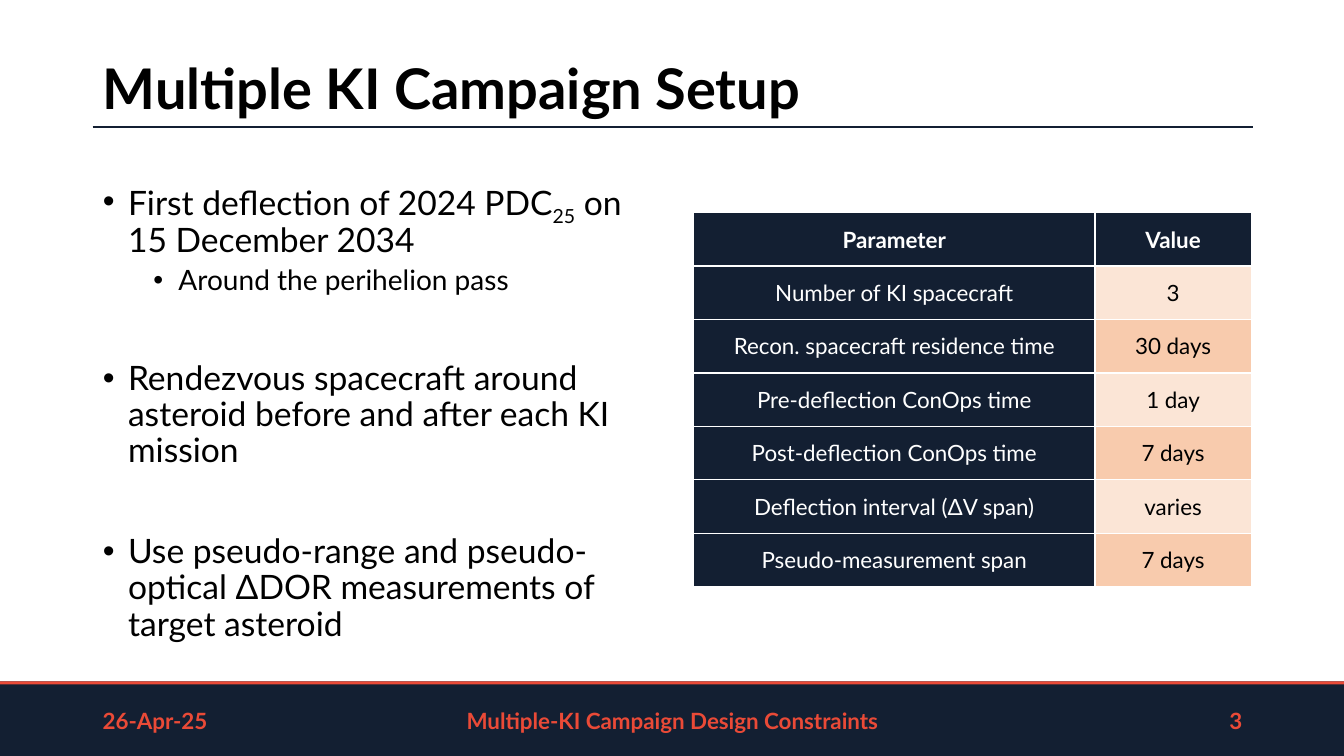
from lxml import etree
from pptx import Presentation
from pptx import util as u
from pptx.dml.color import RGBColor
from pptx.enum import shapes, text
from pptx.oxml.ns import qn

COLORS = {
    "navy": "131F32",
    "red": "EA4A37",
    "black": "000000",
    "white": "FFFFFF",
    "light": "FBE5D6",
    "peach": "F8CBAD",
}
FONT = "Lato"
ALIGN = text.PP_ALIGN
MIDDLE = text.MSO_ANCHOR.MIDDLE

PARAMETERS = [
    ("Parameter", "Value"),
    ("Number of KI spacecraft", "3"),
    ("Recon. spacecraft residence time", "30 days"),
    ("Pre-deflection ConOps time", "1 day"),
    ("Post-deflection ConOps time", "7 days"),
    ("Deflection interval (ΔV span)", "varies"),
    ("Pseudo-measurement span", "7 days"),
]

POINTS = [
    (0, 0, [("First deflection of 2024 PDC", 0), ("25", -25000), (" on 15 December 2034", 0)]),
    (1, 5, [("Around the perihelion pass", 0)]),
    (0, 46, [("Rendezvous spacecraft around asteroid before and after each KI mission", 0)]),
    (0, 46, [("Use pseudo-range and pseudo-optical ΔDOR measurements of target asteroid", 0)]),
]


def rgb(name):
    return RGBColor.from_string(COLORS[name])


class CampaignSlide:
    def __init__(self, deck):
        self.slide = deck.slides.add_slide(deck.slide_layouts[1])

    def style(self, paragraph, size, color, bold=False, align=ALIGN.LEFT):
        paragraph.alignment = align
        paragraph.font.name = FONT
        paragraph.font.size = u.Pt(size)
        paragraph.font.bold = bold
        paragraph.font.color.rgb = rgb(color)

    def place(self, item, left, top, width, height):
        item.left, item.top = u.Inches(left), u.Inches(top)
        item.width, item.height = u.Inches(width), u.Inches(height)

    def bar(self, top, height, color):
        band = self.slide.shapes.add_shape(
            shapes.MSO_SHAPE.RECTANGLE,
            u.Inches(-0.01), u.Inches(top), u.Inches(13.36), u.Inches(height))
        band.shadow.inherit = False
        band.fill.solid()
        band.fill.fore_color.rgb = rgb(color)
        band.line.fill.background()

    def rule(self, left, right, y):
        underline = self.slide.shapes.add_connector(
            shapes.MSO_CONNECTOR.STRAIGHT,
            u.Inches(left), u.Inches(y), u.Inches(right), u.Inches(y))
        underline.line.color.rgb = rgb("navy")
        underline.line.width = u.Pt(1.5)
        etree.SubElement(underline._element.spPr, qn("a:effectLst"))

    def footer(self, left, width, words, align):
        box = self.slide.shapes.add_textbox(
            u.Inches(left), u.Inches(6.95), u.Inches(width), u.Inches(0.4))
        frame = box.text_frame
        frame.word_wrap = True
        frame.vertical_anchor = MIDDLE
        frame.text = words
        self.style(frame.paragraphs[0], 16, "red", True, align)

    def title(self, words):
        heading = self.slide.shapes.title
        self.place(heading, 0.92, 0.34, 11.5, 0.92)
        frame = heading.text_frame
        frame.auto_size = text.MSO_AUTO_SIZE.NONE
        frame.vertical_anchor = text.MSO_ANCHOR.BOTTOM
        frame.text = words
        frame.paragraphs[0].line_spacing = 0.9
        self.style(frame.paragraphs[0], 40, "black", True)

    def bullets(self, points):
        body = self.slide.placeholders[1]
        self.place(body, 0.92, 1.43, 5.53, 5.33)
        frame = body.text_frame
        frame.auto_size = text.MSO_AUTO_SIZE.NONE
        frame.vertical_anchor = MIDDLE
        for index, (level, before, pieces) in enumerate(points):
            paragraph = frame.paragraphs[0] if index == 0 else frame.add_paragraph()
            paragraph.level = level
            paragraph.line_spacing = 0.9
            paragraph.space_before = u.Pt(before)
            properties = paragraph._p.get_or_add_pPr()
            properties.set("marL", str(u.Inches(0.25 + 0.5 * level)))
            properties.set("indent", str(u.Inches(-0.25)))
            etree.SubElement(properties, qn("a:buFont"), typeface="Arial")
            etree.SubElement(properties, qn("a:buChar"), char="•")
            self.style(paragraph, 24 - 4 * level, "black")
            for words, baseline in pieces:
                run = paragraph.add_run()
                run.text = words
                if baseline:
                    run.font._element.set("baseline", str(baseline))

    def cell(self, target, words, fill, color, bold):
        properties = target._tc.get_or_add_tcPr()
        for side in ("lnL", "lnR", "lnT", "lnB"):
            border = etree.SubElement(properties, qn(f"a:{side}"), w=str(u.Pt(1)))
            paint = etree.SubElement(border, qn("a:solidFill"))
            etree.SubElement(paint, qn("a:srgbClr"), val=COLORS["white"])
        target.fill.solid()
        target.fill.fore_color.rgb = rgb(fill)
        target.vertical_anchor = MIDDLE
        target.text = words
        self.style(target.text_frame.paragraphs[0], 16, color, bold, ALIGN.CENTER)

    def table(self, rows):
        grid = self.slide.shapes.add_table(
            len(rows), 2, u.Inches(6.88), u.Inches(2.11), u.Inches(5.53), u.Inches(3.71)).table
        for column, width in zip(grid.columns, (3.98, 1.55)):
            column.width = u.Inches(width)
        for r, (parameter, value) in enumerate(rows):
            header = r == 0
            value_fill = "navy" if header else ("peach", "light")[r % 2]
            self.cell(grid.cell(r, 0), parameter, "navy", "white", header)
            self.cell(grid.cell(r, 1), value, value_fill, "white" if header else "black", header)


def main():
    deck = Presentation()
    deck.slide_width, deck.slide_height = u.Inches(13.33), u.Inches(7.5)
    campaign = CampaignSlide(deck)
    campaign.bar(6.76, 0.75, "navy")
    campaign.bar(6.76, 0.03, "red")
    campaign.rule(0.92, 12.43, 1.26)
    campaign.footer(10.92, 1.5, "3", ALIGN.RIGHT)
    campaign.footer(2.58, 8.18, "Multiple-KI Campaign Design Constraints", ALIGN.CENTER)
    campaign.footer(0.92, 1.5, "26-Apr-25", ALIGN.LEFT)
    campaign.title("Multiple KI Campaign Setup")
    campaign.bullets(POINTS)
    campaign.table(PARAMETERS)
    deck.save("out.pptx")


if __name__ == "__main__":
    main()
